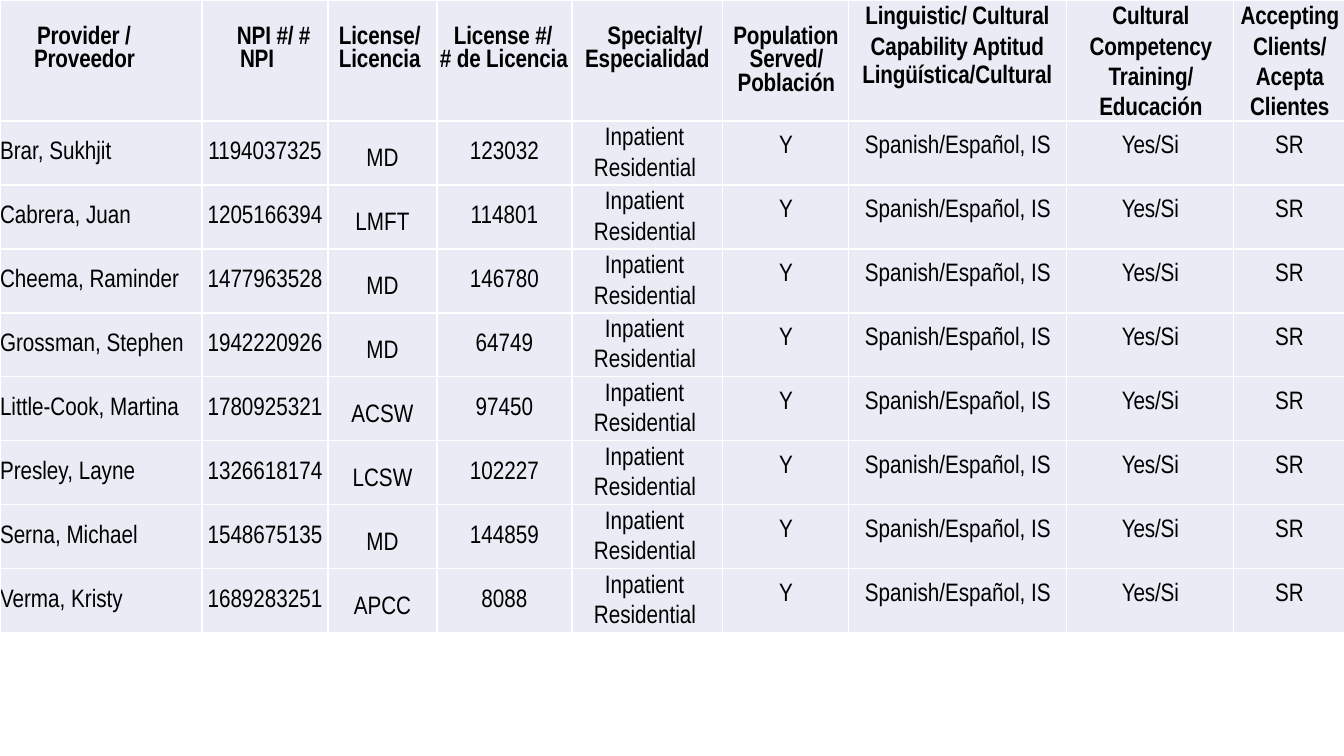
from dataclasses import dataclass

from lxml import etree
from pptx import Presentation
from pptx.dml.color import RGBColor
from pptx.enum.text import MSO_ANCHOR, PP_ALIGN
from pptx.oxml.ns import qn
from pptx.util import Emu, Pt

LEFT, MID, RIGHT = PP_ALIGN.LEFT, PP_ALIGN.CENTER, PP_ALIGN.RIGHT
TOP, CENTER = MSO_ANCHOR.TOP, MSO_ANCHOR.MIDDLE

FONT = "Arial Narrow"
SIZE = 18
INK, FILL, RULE = "000000", "E9EBF5", "FFFFFF"
WIDE, HIGH = 1344, 756
HEAD_H, ROW_H = 121, 64
DROP = 26  # space above the short headings
STEP = 21.6  # exact line pitch, in points
TIGHT = -0.1  # letter spacing, in points


@dataclass(frozen=True)
class Style:
    align: PP_ALIGN = MID
    anchor: MSO_ANCHOR = TOP
    top: int = 0
    left: int = 0
    first: int = 0
    right: int = 0
    pitch: tuple[float, ...] = ()
    track: float = 0
    bold: bool = False


@dataclass(frozen=True)
class Column:
    title: str
    width: int
    head: Style
    body: Style


def head(align: PP_ALIGN, left: int, first: int = 0, right: int = 0,
         pitch: tuple[float, ...] = ()) -> Style:
    return Style(align, top=0 if pitch else DROP, left=left, first=first,
                 right=right, pitch=pitch, track=TIGHT, bold=True)


VALUE = Style(anchor=CENTER)
LOW = Style(anchor=CENTER, top=14)
HIGH_UP = Style(top=14)

COLUMNS = [
    Column("Provider /\vProveedor", 202, head(LEFT, 34, 3), Style(LEFT, CENTER)),
    Column("NPI #/ # NPI", 126, head(LEFT, 38, -3), VALUE),
    Column("License/ Licencia", 109, head(LEFT, 11), LOW),
    Column("License #/\v# de Licencia", 135, head(LEFT, 3, 14), VALUE),
    Column("Specialty/ Especialidad", 151, head(MID, 10, 15, 10),
           Style(LEFT, left=22, first=11, pitch=(STEP,))),
    Column("Population Served/ Población", 126, head(MID, 6, -1, 5), HIGH_UP),
    Column("Linguistic/ Cultural Capability Aptitud\nLingüística/Cultural", 218,
           head(MID, 12, 0, 13, (STEP, STEP - 1)), HIGH_UP),
    Column("Cultural Competency Training/ Educación", 167,
           head(MID, 4, 0, 3, (STEP,)), Style(top=14, track=TIGHT)),
    Column("Accepting Clients/ Acepta Clientes", 110,
           head(MID, 5, 0, 3, (STEP,)), Style(RIGHT, top=14, right=40)),
]

PEOPLE = [
    ("Brar, Sukhjit", "1194037325", "MD", "123032"),
    ("Cabrera, Juan", "1205166394", "LMFT", "114801"),
    ("Cheema, Raminder", "1477963528", "MD", "146780"),
    ("Grossman, Stephen", "1942220926", "MD", "64749"),
    ("Little-Cook, Martina", "1780925321", "ACSW", "97450"),
    ("Presley, Layne", "1326618174", "LCSW", "102227"),
    ("Serna, Michael", "1548675135", "MD", "144859"),
    ("Verma, Kristy", "1689283251", "APCC", "8088"),
]
SHARED = ("Inpatient Residential", "Y", "Spanish/Español, IS", "Yes/Si", "SR")


def px(n: int) -> Emu:
    return Emu(round(n * 914400 / 100.8))


def color(code: str) -> RGBColor:
    return RGBColor.from_string(code)


def border(cell, col: int) -> None:
    props = cell._tc.get_or_add_tcPr()
    thin = {"lnL": col == 0, "lnR": col == len(COLUMNS) - 1}
    for n, side in enumerate(("lnL", "lnR", "lnT", "lnB")):
        line = etree.Element(qn(f"a:{side}"))
        line.set("w", str(Pt(0.5 if thin.get(side) else 1)))
        solid = etree.SubElement(line, qn("a:solidFill"))
        etree.SubElement(solid, qn("a:srgbClr")).set("val", RULE)
        props.insert(n, line)


def write(cell, text: str, style: Style) -> None:
    cell.fill.solid()
    cell.fill.fore_color.rgb = color(FILL)
    cell.margin_left = cell.margin_right = cell.margin_bottom = 0
    cell.margin_top = px(style.top)
    cell.vertical_anchor = style.anchor
    cell.text = text
    for n, para in enumerate(cell.text_frame.paragraphs):
        para.alignment = style.align
        if style.pitch:
            para.line_spacing = Pt(style.pitch[n])
        props = para._p.get_or_add_pPr()
        props.set("marL", str(px(style.left)))
        props.set("marR", str(px(style.right)))
        props.set("indent", str(px(style.first)))
        font = para.font
        font.name, font.size, font.bold = FONT, Pt(SIZE), style.bold
        font.color.rgb = color(INK)
        for run in para.runs:
            run._r.get_or_add_rPr().set("spc", str(round(style.track * 100)))


def main() -> None:
    deck = Presentation()
    deck.slide_width, deck.slide_height = px(WIDE), px(HIGH)
    slide = deck.slides.add_slide(deck.slide_layouts[6])
    count = len(PEOPLE) + 1
    table = slide.shapes.add_table(count, len(COLUMNS), 0, 0, px(WIDE),
                                   px(HEAD_H + ROW_H * len(PEOPLE))).table
    table.horz_banding = False
    for row in range(count):
        table.rows[row].height = px(ROW_H if row else HEAD_H)
    for col, column in enumerate(COLUMNS):
        table.columns[col].width = px(column.width)
        write(table.cell(0, col), column.title, column.head)
        for row, person in enumerate(PEOPLE, 1):
            write(table.cell(row, col), (person + SHARED)[col], column.body)
        for row in range(count):
            border(table.cell(row, col), col)
    deck.save("out.pptx")


if __name__ == "__main__":
    main()
